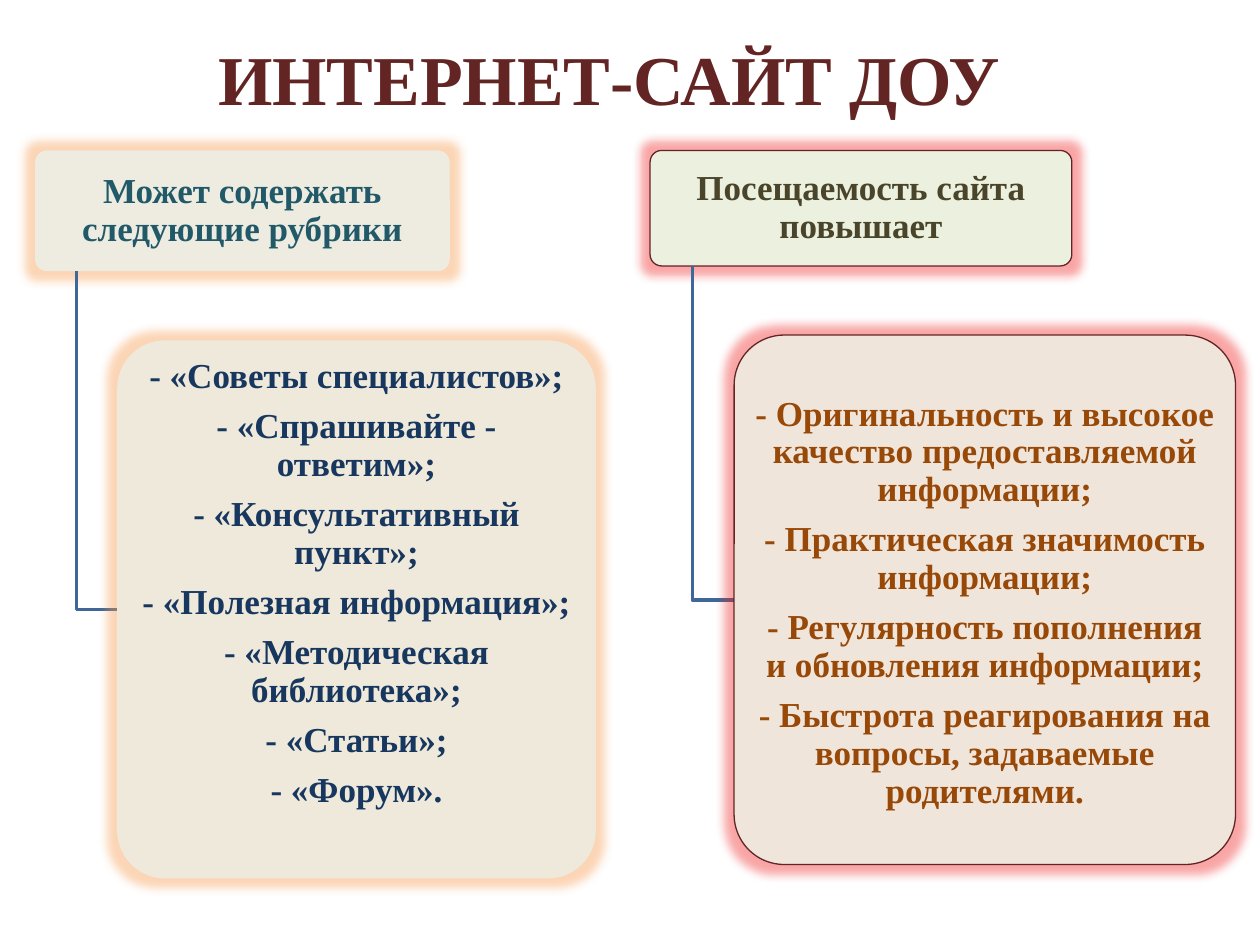
from lxml.etree import SubElement
from pptx import Presentation
from pptx.dml.color import RGBColor
from pptx.enum.shapes import MSO_SHAPE
from pptx.enum.text import MSO_ANCHOR, PP_ALIGN
from pptx.oxml.ns import qn
from pptx.util import Pt


def color(value):
    """Turn a hex string into a colour."""
    return RGBColor.from_string(value)


def add_text(frame, text, size=20, ink="000000", spacing=0.9, after=7,
             font="Times New Roman"):
    """Write each line of text as a centred bold paragraph."""
    for index, line in enumerate(text.split("\n")):
        para = frame.add_paragraph() if index else frame.paragraphs[0]
        para.alignment = PP_ALIGN.CENTER
        para.line_spacing = spacing
        para.space_after = Pt(after)
        span = para.add_run()
        span.text = line
        span.font.name = font
        span.font.size = Pt(size)
        span.font.bold = True
        span.font.color.rgb = color(ink)


class SchemePage:
    """Hold the style and the current slide."""

    link_color = "3F6797"
    title_color = "632523"

    def __init__(self, deck):
        """Start a blank slide."""
        self.page = deck.slides.add_slide(deck.slide_layouts[6])

    def title(self, text, left, top, width, height):
        """Add the heading."""
        box = self.page.shapes.add_textbox(Pt(left), Pt(top), Pt(width), Pt(height))
        frame = box.text_frame
        frame.word_wrap = True
        frame.margin_top = frame.margin_bottom = 0
        add_text(frame, text, size=40, ink=self.title_color, spacing=1, after=0)

    def card(self, text, area, fill, ink, glow, border=None, opacity=100,
             extra_top=0, extra_bottom=0):
        """Add a rounded card with a glow and return it."""
        box = self.page.shapes.add_shape(
            MSO_SHAPE.ROUNDED_RECTANGLE, *[Pt(length) for length in area])
        box.adjustments[0] = 0.1
        box.fill.solid()
        box.fill.fore_color.rgb = color(fill)
        if opacity < 100:
            self.set_opacity(box.fill._xPr.find(qn("a:solidFill"))[0], opacity)
        if border:
            box.line.color.rgb = color(border)
            box.line.width = Pt(0.75)
        else:
            box.line.fill.background()
        self.glow(box, glow)
        frame = box.text_frame
        frame.word_wrap = True
        frame.vertical_anchor = MSO_ANCHOR.MIDDLE
        frame.margin_left = frame.margin_right = Pt(3)
        frame.margin_top = Pt(2 + extra_top)
        frame.margin_bottom = Pt(2 + extra_bottom)
        add_text(frame, text, ink=ink)
        return box

    def set_opacity(self, element, percent):
        """Set the opacity of a colour element."""
        SubElement(element, qn("a:alpha"), val=str(percent * 1000))

    def glow(self, box, hue, radius=11):
        """Replace the shadow of a shape by a glow."""
        box.shadow.inherit = False
        effects = box._element.spPr.find(qn("a:effectLst"))
        glow = SubElement(effects, qn("a:glow"), rad=str(Pt(radius)))
        self.set_opacity(SubElement(glow, qn("a:srgbClr"), val=hue), 40)

    def elbow(self, header, area):
        """Link the bottom of a header to the left side of a card area."""
        left, top, width, height = [Pt(length) for length in area]
        start = header.left + header.width // 10
        middle = top + height // 2
        builder = self.page.shapes.build_freeform(start, header.top + header.height)
        builder.add_line_segments([(start, middle), (left, middle)], close=False)
        link = builder.convert_to_shape()
        link.shadow.inherit = False
        link.fill.background()
        link.line.color.rgb = color(self.link_color)
        link.line.width = Pt(2)

    def branch(self, header, body, glow, border=None):
        """Add a header card, its elbow link and its body card."""
        top_card = self.card(**header, glow=glow, border=border)
        self.elbow(top_card, body["area"])
        self.card(**body, fill="EEECE1", opacity=90, glow=glow, border=border)


SECTIONS = """- «Советы специалистов»;
- «Спрашивайте - ответим»;
- «Консультативный пункт»;
- «Полезная информация»;
- «Методическая библиотека»;
- «Статьи»;
- «Форум»."""

REASONS = """- Оригинальность и высокое качество предоставляемой информации;
- Практическая значимость информации;
- Регулярность пополнения и обновления информации;
- Быстрота реагирования на вопросы, задаваемые родителями."""


def main():
    """Build the slide and save it."""
    deck = Presentation()
    deck.slide_width, deck.slide_height = Pt(720), Pt(540)
    scheme = SchemePage(deck)
    scheme.title("ИНТЕРНЕТ-САЙТ ДОУ", 42, 20, 612, 46)
    scheme.branch(
        header=dict(text="Может содержать следующие рубрики",
                    area=(20, 86, 237, 69), fill="EEECE1", ink="215968"),
        body=dict(text=SECTIONS, area=(67, 194.5, 273.5, 307.5), ink="17375E",
                  extra_bottom=29),
        glow="F79646")
    scheme.branch(
        header=dict(text="Посещаемость сайта повышает",
                    area=(371.5, 86, 241, 66), fill="EBF1DE", ink="4A452A"),
        body=dict(text=REASONS, area=(419.5, 191.5, 286.5, 302.5), ink="984807",
                  extra_top=4),
        glow="F02020", border="632523")
    deck.save("out.pptx")


if __name__ == "__main__":
    main()
